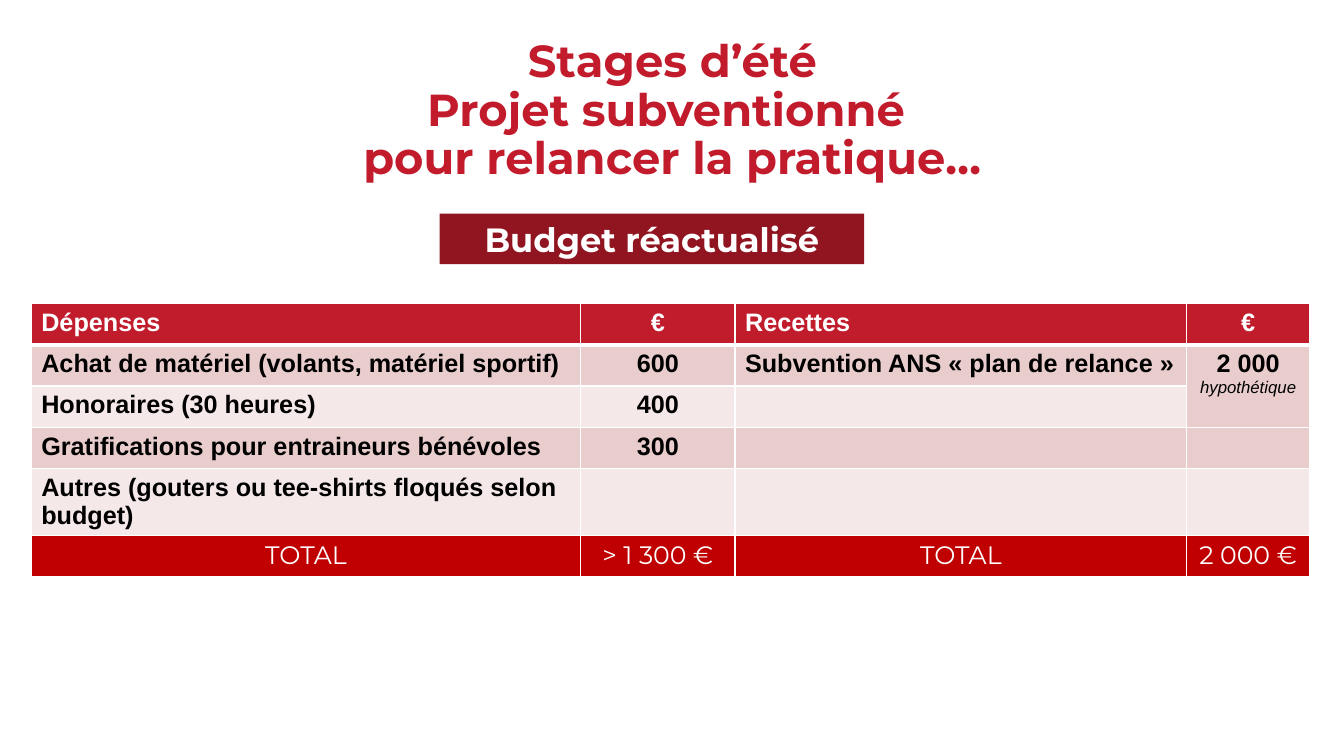
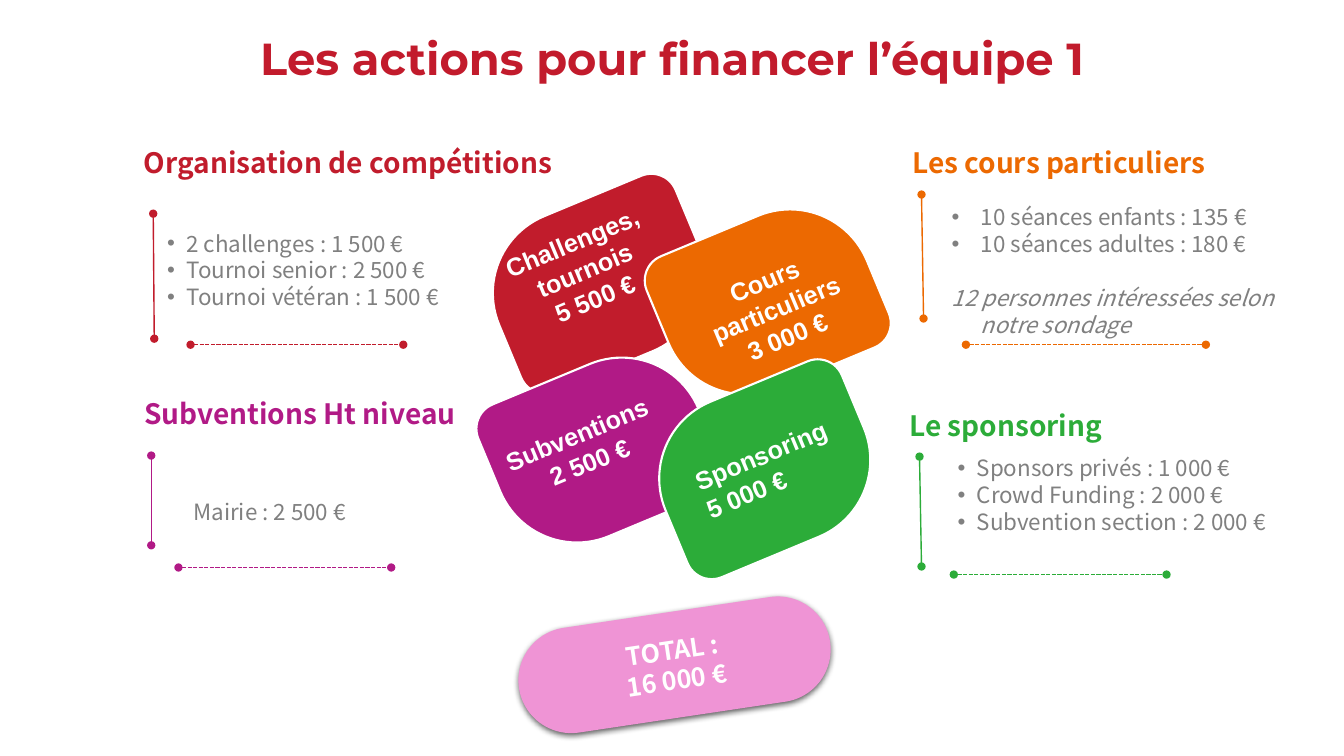
from dataclasses import dataclass

from lxml.etree import SubElement
from pptx import Presentation
from pptx.dml.color import RGBColor
from pptx.enum.dml import MSO_LINE
from pptx.enum.shapes import MSO_CONNECTOR, MSO_SHAPE
from pptx.enum.text import MSO_ANCHOR, MSO_AUTO_SIZE, PP_ALIGN
from pptx.oxml.ns import qn
from pptx.util import Inches, Pt

COLORS = {
    "title": "C21B2C", "red": "C11C2C", "dark_red": "911521", "total": "C00000",
    "orange": "EC6901", "purple": "B11A86", "green": "2CAC39", "pink": "EF94D5",
    "band_dark": "E9CDCD", "band_light": "F4E8E8",
    "white": "FFFFFF", "black": "000000", "grey": "808080",
}
TITLE_FONT, LABEL_FONT, TEXT_FONT = "Montserrat", "Arial", "Noto Sans CJK SC"
TILT = 337.4
LARGE_CORNER, SMALL_CORNER = 0.5, 0.158


@dataclass(frozen=True)
class Line:
    text: str
    bullet: bool = False
    left: float = 0
    hanging: float = 0
    before: float = 0
    italic: bool | None = None
    centered: bool = False


@dataclass(frozen=True)
class Style:
    font: str
    size: float
    color: str
    bold: bool = False


@dataclass(frozen=True)
class Petal:
    color: str
    at: tuple
    mirrored: bool
    label_at: tuple
    lines: tuple
    wrap: bool


@dataclass(frozen=True)
class Topic:
    color: str
    heading: str
    heading_at: tuple
    body_at: tuple
    lines: tuple
    side_rule: tuple
    base_rule: tuple


HEADING = Style(TITLE_FONT, 24, "white", True)
PETAL_LABEL = Style(LABEL_FONT, 18, "white", True)
BODY = Style(TEXT_FONT, 16, "grey")


def bullets(indent: float, *texts: str) -> tuple:
    return tuple(Line(text, True, indent, indent) for text in texts)


PETALS = (
    Petal("red", (4.87, 1.99), False, (4.98, 2.13, 1.85, 1.01),
          (Line("Challenges,"), Line("tournois", left=0.21),
           Line("5 500 €", left=0.28)), True),
    Petal("orange", (6.55, 2.17), True, (6.72, 2.56, 1.95, 1.01),
          (Line("Cours particuliers", centered=True),
           Line("3 000 €", centered=True)), True),
    Petal("purple", (4.88, 3.64), True, (4.93, 4.09, 1.72, 0.71),
          (Line("Subventions"), Line("2 500 €", centered=True)), False),
    Petal("green", (6.52, 3.83), False, (6.81, 4.3, 1.6, 0.71),
          (Line("Sponsoring"), Line("5 000 €")), False),
)
TOPICS = (
    Topic("red", "Organisation de compétitions", (1.33, 1.39, 4.4, 0.44),
          (1.56, 2.23, 3.05, 0.91),
          bullets(0.19, "2 challenges : 1 500 €", "Tournoi senior : 2 500 €",
                  "Tournoi vétéran : 1 500 €"),
          (1.52, 2.12, 1.53, 3.36), (1.89, 3.42, 4, 3.42)),
    Topic("purple", "Subventions Ht niveau", (1.33, 3.88, 3.48, 0.43),
          (1.82, 4.89, 1.86, 0.37), (Line("Mairie : 2 500 €"),),
          (1.5, 4.52, 1.5, 5.41), (1.77, 5.63, 3.88, 5.63)),
    Topic("green", "Le sponsoring", (8.92, 4, 4.15, 0.44),
          (9.4, 4.46, 3.42, 1.18),
          bullets(0.19, "Sponsors privés : 1 000 €", "Crowd Funding : 2 000 €",
                  "Subvention section : 2 000 €"),
          (9.12, 4.53, 9.14, 5.62), (9.46, 5.7, 11.57, 5.7)),
    Topic("orange", "Les cours particuliers", (8.95, 1.39, 3.59, 0.44),
          (9.34, 1.97, 3.58, 1.45),
          bullets(0.29, "10 séances enfants : 135 €", "10 séances adultes : 180 €")
          + (Line("12 personnes intéressées selon notre sondage", left=0.29,
                  hanging=0.29, before=19, italic=True),),
          (9.14, 1.93, 9.16, 3.16), (9.58, 3.42, 11.96, 3.42)),
)
BUDGET = (
    ("Dépenses", "€", "Recettes", "€"),
    ("Achat de matériel (volants, matériel sportif)", "600",
     "Subvention ANS « plan de relance »", "2 000 "),
    ("Honoraires (30 heures)", "400", "", ""),
    ("Gratifications pour entraineurs bénévoles", "300", "", ""),
    ("Autres (gouters ou tee-shirts floqués selon budget)", "", "", ""),
    ("TOTAL", "> 1 300 €", "TOTAL", "2 000 €"),
)
COLUMN_WIDTHS = (5.45, 1.53, 4.48, 1.22)
ROW_HEIGHT = 0.41


def rgb(name: str) -> RGBColor:
    return RGBColor.from_string(COLORS[name])


def inches(values: tuple) -> list:
    return [Inches(value) for value in values]


def set_font(font, style: Style) -> None:
    font.name, font.size, font.bold = style.font, Pt(style.size), style.bold
    font.color.rgb = rgb(style.color)


def write_lines(frame, lines: tuple, style: Style) -> None:
    for index, line in enumerate(lines):
        para = frame.add_paragraph() if index else frame.paragraphs[0]
        para.text = line.text
        para.alignment = PP_ALIGN.CENTER if line.centered else PP_ALIGN.LEFT
        if line.before:
            para.space_before = Pt(line.before)
        properties = para._p.get_or_add_pPr()
        if line.left:
            properties.set("marL", str(Inches(line.left)))
            properties.set("indent", str(-Inches(line.hanging)))
        if line.bullet:
            SubElement(properties, qn("a:buFont"), typeface="Arial")
            SubElement(properties, qn("a:buChar"), char="•")
        set_font(para.font, style)
        para.font.italic = line.italic


def add_text(page, at: tuple, lines: tuple, style: Style,
             rotation: float = 0, wrap: bool = True) -> None:
    box = page.shapes.add_textbox(*inches(at))
    box.rotation = rotation
    box.text_frame.word_wrap = wrap
    write_lines(box.text_frame, lines, style)


def add_block(page, kind, at: tuple, color: str):
    block = page.shapes.add_shape(kind, *inches(at))
    block.shadow.inherit = False
    block.fill.solid()
    block.fill.fore_color.rgb = rgb(color)
    block.line.fill.background()
    return block


def add_rule(page, ends: tuple, color: str, dashed: bool = False) -> None:
    rule = page.shapes.add_connector(MSO_CONNECTOR.STRAIGHT, *inches(ends))
    rule.line.color.rgb = rgb(color)
    rule.line.width = Pt(1)
    if dashed:
        rule.line.dash_style = MSO_LINE.SQUARE_DOT
    outline = rule.line._get_or_add_ln()
    for end in ("a:headEnd", "a:tailEnd"):
        SubElement(outline, qn(end), type="oval")
    SubElement(rule._element.spPr, qn("a:effectLst"))


def add_page(deck, title_lines: tuple, title_height: float):
    page = deck.slides.add_slide(deck.slide_layouts[5])
    title = page.shapes.title
    title.left, title.top, title.width, title.height = inches(
        (0.92, 0.38, 11.5, title_height))
    frame = title.text_frame
    frame.word_wrap = True
    frame.auto_size = MSO_AUTO_SIZE.NONE
    frame.vertical_anchor = MSO_ANCHOR.MIDDLE
    para = frame.paragraphs[0]
    for index, text in enumerate(title_lines):
        if index:
            para.add_line_break()
        para.add_run().text = text
    para.alignment = PP_ALIGN.CENTER
    para.line_spacing = 0.9
    set_font(para.font, Style(TITLE_FONT, 32, "title", True))
    return page


def set_borders(cell, bottom: float) -> None:
    properties = cell._tc.get_or_add_tcPr()
    for side, width in (("L", 1), ("R", 1), ("T", 1), ("B", bottom)):
        border = SubElement(properties, qn(f"a:ln{side}"), w=str(Pt(width)))
        fill = SubElement(border, qn("a:solidFill"))
        SubElement(fill, qn("a:srgbClr"), val=COLORS["white"])


def add_budget_table(page) -> None:
    last = len(BUDGET) - 1
    table = page.shapes.add_table(
        len(BUDGET), len(COLUMN_WIDTHS),
        *inches((0.31, 3.01, sum(COLUMN_WIDTHS), ROW_HEIGHT * len(BUDGET)))).table
    for column, width in zip(table.columns, COLUMN_WIDTHS):
        column.width = Inches(width)
    table.cell(1, 3).merge(table.cell(2, 3))
    for row, texts in enumerate(BUDGET):
        fill = "band_dark" if row % 2 else "band_light"
        style = Style(LABEL_FONT, 18, "black", True)
        if row == 0:
            fill, style = "red", Style(LABEL_FONT, 18, "white", True)
        elif row == last:
            fill, style = "total", Style(TITLE_FONT, 18, "white")
        for column, text in enumerate(texts):
            cell = table.cell(row, column)
            set_borders(cell, 1 if row else 3)
            cell.fill.solid()
            cell.fill.fore_color.rgb = rgb(fill)
            centered = column % 2 == 1 or row == last
            write_lines(cell.text_frame, (Line(text, centered=centered),), style)
    span = table.cell(1, 3).text_frame.paragraphs[0].add_run()
    span.text = "hypothétique"
    set_font(span.font, Style(LABEL_FONT, 12, "black"))
    span.font.italic = True


def add_total_pill(page) -> None:
    pill = add_block(page, MSO_SHAPE.ROUNDED_RECTANGLE, (5.13, 6.07, 3.12, 1.05), "pink")
    pill.adjustments[0] = 0.5
    pill.rotation = 351.5
    effects = pill._element.spPr.find(qn("a:effectLst"))
    shadow = SubElement(effects, qn("a:outerShdw"), blurRad=str(Pt(4.5)),
                        dist=str(Pt(1.5)), dir="5400000", rotWithShape="0")
    tint = SubElement(shadow, qn("a:srgbClr"), val=COLORS["black"])
    SubElement(tint, qn("a:alpha"), val="63000")
    pill.text_frame.word_wrap = False
    write_lines(pill.text_frame,
                (Line("TOTAL :", centered=True), Line("16 000 €", centered=True)),
                Style(TEXT_FONT, 18, "white", True))


def build_budget(deck) -> None:
    page = add_page(deck, ("Stages d’été", "Projet subventionné ",
                           "pour relancer la pratique…"), 1.46)
    add_budget_table(page)
    banner = add_block(page, MSO_SHAPE.RECTANGLE, (4.36, 2.12, 4.21, 0.5), "dark_red")
    write_lines(banner.text_frame, (Line("Budget réactualisé", centered=True),), HEADING)


def build_actions(deck) -> None:
    page = add_page(deck, ("Les actions pour financer l’équipe 1",), 0.45)
    for petal in PETALS:
        leaf = add_block(page, MSO_SHAPE.ROUND_2_DIAG_RECTANGLE,
                         petal.at + (2.13, 1.65), petal.color)
        corners = (LARGE_CORNER, SMALL_CORNER)
        leaf.adjustments[0], leaf.adjustments[1] = (
            corners[::-1] if petal.mirrored else corners)
        leaf.rotation = TILT
        leaf.line.color.rgb = rgb("white")
        leaf.line.width = Pt(1.5)
    for petal in PETALS:
        add_text(page, petal.label_at, petal.lines, PETAL_LABEL, TILT, petal.wrap)
    for topic in TOPICS:
        add_rule(page, topic.side_rule, topic.color)
        add_text(page, topic.heading_at, (Line(topic.heading),),
                 Style(TEXT_FONT, 20, topic.color, True))
        add_rule(page, topic.base_rule, topic.color, dashed=True)
        add_text(page, topic.body_at, topic.lines, BODY)
    add_total_pill(page)


def main() -> None:
    deck = Presentation()
    deck.slide_width, deck.slide_height = inches((13.33, 7.5))
    build_budget(deck)
    build_actions(deck)
    deck.save("out.pptx")


if __name__ == "__main__":
    main()
